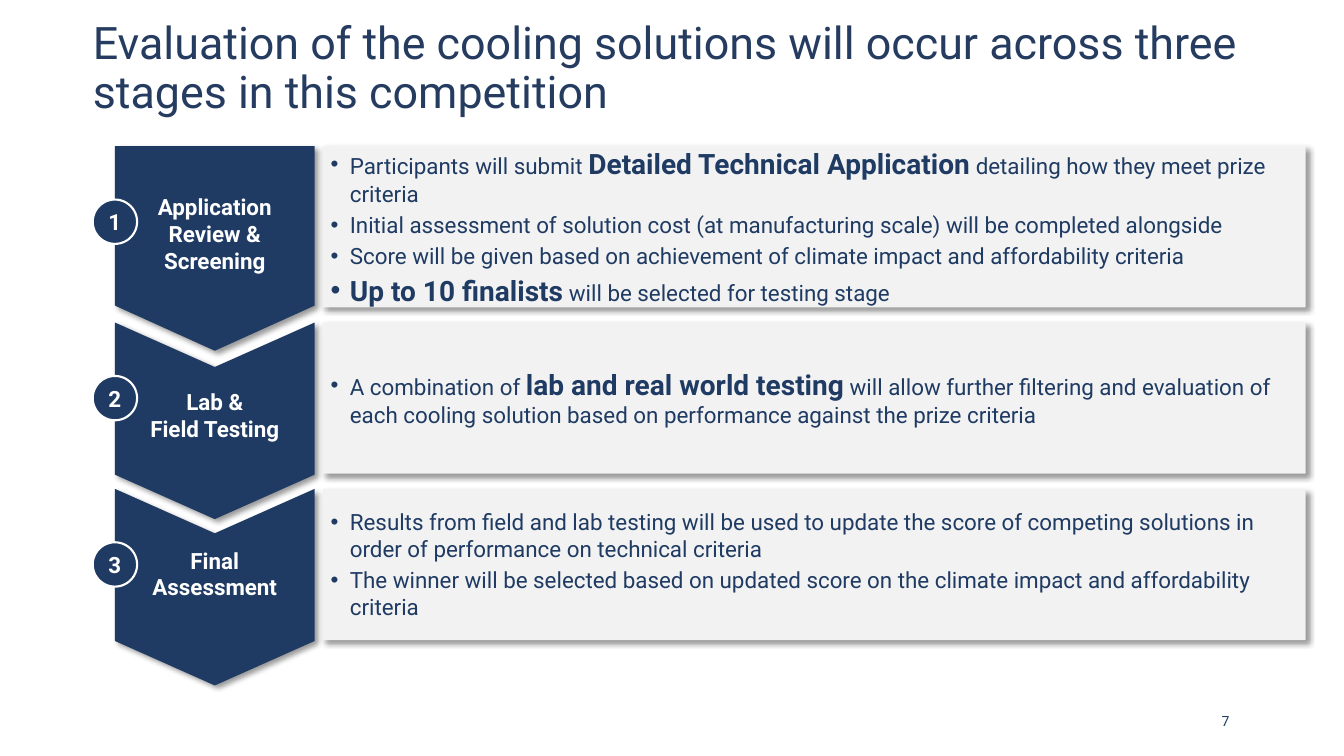
from lxml.etree import SubElement
from pptx import Presentation
from pptx.dml.color import RGBColor
from pptx.enum.shapes import MSO_SHAPE
from pptx.enum.text import MSO_ANCHOR, MSO_AUTO_SIZE, PP_ALIGN
from pptx.oxml.ns import qn
from pptx.util import Inches, Pt

# Content: in bullets, each run is (text, emphasised)
TITLE = "Evaluation of the cooling solutions will occur across three stages in this competition"
PAGE = "7"
STAGES = [
    {"label": ["Application", "Review &", "Screening"], "height": 1.6,
     "arrow": 2.03, "label_mid": 0.87, "bullets": [
        [("Participants will submit ", False), ("Detailed Technical Application", True),
         (" detailing how they meet prize criteria", False)],
        [("Initial assessment of solution cost (at manufacturing scale) "
          "will be completed alongside", False)],
        [("Score will be given based on achievement of climate impact "
          "and affordability criteria", False)],
        [("Up to 10 finalists", True), (" will be selected for testing stage", False)]]},
    {"label": ["Lab &", "Field Testing"], "height": 1.5,
     "arrow": 1.95, "label_mid": 0.92, "bullets": [
        [("A combination of ", False), ("lab and real world testing", True),
         (" will allow further filtering and evaluation of each cooling solution "
          "based on performance against the prize criteria", False)]]},
    {"label": ["Final", "Assessment"], "height": 1.5,
     "arrow": 1.95, "label_mid": 0.84, "bullets": [
        [("Results from field and lab testing will be used to update the score of "
          "competing solutions in order of performance on technical criteria", False)],
        [("The winner will be selected based on updated score on the climate impact "
          "and affordability criteria", False)]]},
]

# Style and grid, in inches
COLORS = {"title": "253C60", "navy": "1F3B63", "panel": "F2F2F2",
          "white": "FFFFFF", "shadow": "000000"}
FONT = "Roboto"
MARGIN, TOP, GAP = 0.92, 1.45, 0.15
ARROW_X, ARROW_W = 1.14, 1.98
PANEL_X, PANEL_W = 3.2, 9.75
LABEL_H, BADGE, BADGE_MID = 1.07, 0.44, 0.75
POINT = 0.226


def rgb(name):
    return RGBColor.from_string(COLORS[name])


def add_run(p, text, size, color, bold=False):
    r = p.add_run()
    r.text = text
    r.font.name, r.font.size, r.font.bold = FONT, Pt(size), bold
    r.font.color.rgb = rgb(color)


def set_frame(sp, insets, wrap=True):
    tf = sp.text_frame
    tf.word_wrap, tf.auto_size = wrap, MSO_AUTO_SIZE.NONE
    tf.vertical_anchor = MSO_ANCHOR.MIDDLE
    tf.margin_left, tf.margin_top, tf.margin_right, tf.margin_bottom = map(Inches, insets)
    return tf


def add_box(slide, kind, box, fill):
    sp = slide.shapes.add_shape(kind, *map(Inches, box))
    sp.shadow.inherit = False
    sp.fill.solid()
    sp.fill.fore_color.rgb = rgb(fill)
    sp.line.fill.background()
    return sp


def add_shadow(sp):
    effects = sp._element.spPr.find(qn("a:effectLst"))
    shadow = SubElement(effects, qn("a:outerShdw"), blurRad=str(Pt(4)), dist=str(Pt(3)),
                        dir=str(45 * 60000), algn="tl", rotWithShape="0")
    color = SubElement(shadow, qn("a:srgbClr"), val=COLORS["shadow"])
    SubElement(color, qn("a:alpha"), val="40000")


def add_arrow(slide, kind, top, length):
    # The shape is turned a quarter, so its length runs down the slide
    left = ARROW_X + (ARROW_W - length) / 2
    sp = add_box(slide, kind, (left, top + (length - ARROW_W) / 2, length, ARROW_W), "navy")
    sp.rotation = 90
    sp.adjustments[0] = POINT
    add_shadow(sp)


def add_label(slide, lines, middle):
    box = (ARROW_X, middle - LABEL_H / 2, ARROW_W, LABEL_H)
    p = set_frame(slide.shapes.add_textbox(*map(Inches, box)), (0, 0, 0, 0)).paragraphs[0]
    p.alignment = PP_ALIGN.CENTER
    for i, line in enumerate(lines):
        if i:
            p.add_line_break()
        add_run(p, line, 16, "white", True)


def add_panel(slide, top, height, bullets):
    sp = add_box(slide, MSO_SHAPE.RECTANGLE, (PANEL_X, top, PANEL_W, height), "panel")
    add_shadow(sp)
    tf = set_frame(sp, (0.08, 0.04, 0.08, 0.04))
    for i, runs in enumerate(bullets):
        p = tf.add_paragraph() if i else tf.paragraphs[0]
        p.level, p.alignment = 1, PP_ALIGN.LEFT
        p.space_before = Pt(3 if i else 0)
        pPr = p._p.get_or_add_pPr()
        pPr.set("marL", str(Inches(0.19)))
        pPr.set("indent", str(-Inches(0.19)))
        SubElement(SubElement(pPr, qn("a:buClr")), qn("a:srgbClr"), val=COLORS["navy"])
        SubElement(pPr, qn("a:buFont"), typeface="Arial")
        SubElement(pPr, qn("a:buChar"), char="•")
        for text, strong in runs:
            add_run(p, text, 20 if strong else 16, "navy", strong)


def add_badge(slide, number, middle):
    box = (MARGIN, middle - BADGE / 2, BADGE, BADGE)
    sp = add_box(slide, MSO_SHAPE.OVAL, box, "navy")
    sp.line.color.rgb, sp.line.width = rgb("white"), Pt(1.5)
    p = set_frame(sp, (0.1, 0.05, 0.1, 0.05), wrap=False).paragraphs[0]
    p.alignment = PP_ALIGN.CENTER
    add_run(p, str(number), 16, "white", True)


def main():
    prs = Presentation()
    prs.slide_width, prs.slide_height = Inches(13.33), Inches(7.5)
    slide = prs.slides.add_slide(prs.slide_layouts[5])

    # Title
    title = slide.shapes.title
    title.left, title.top, title.width, title.height = map(Inches, (MARGIN, 0.32, 11.5, 0.74))
    p = set_frame(title, (0, 0.05, 0.1, 0.05)).paragraphs[0]
    p.alignment, p.line_spacing = PP_ALIGN.LEFT, 0.9
    add_run(p, TITLE, 32, "title")

    # Stages, stacked with equal gaps
    top = TOP
    for number, stage in enumerate(STAGES, 1):
        kind = MSO_SHAPE.PENTAGON if number == 1 else MSO_SHAPE.CHEVRON
        add_arrow(slide, kind, top, stage["arrow"])
        add_label(slide, stage["label"], top + stage["label_mid"])
        add_panel(slide, top, stage["height"], stage["bullets"])
        add_badge(slide, number, top + BADGE_MID)
        top += stage["height"] + GAP

    # Page number
    page = slide.shapes.add_textbox(*map(Inches, (11.9, 6.95, 0.51, 0.4)))
    p = set_frame(page, (0.1, 0.05, 0.1, 0.05)).paragraphs[0]
    p.alignment = PP_ALIGN.CENTER
    add_run(p, PAGE, 10, "navy")

    prs.save("out.pptx")


if __name__ == "__main__":
    main()
